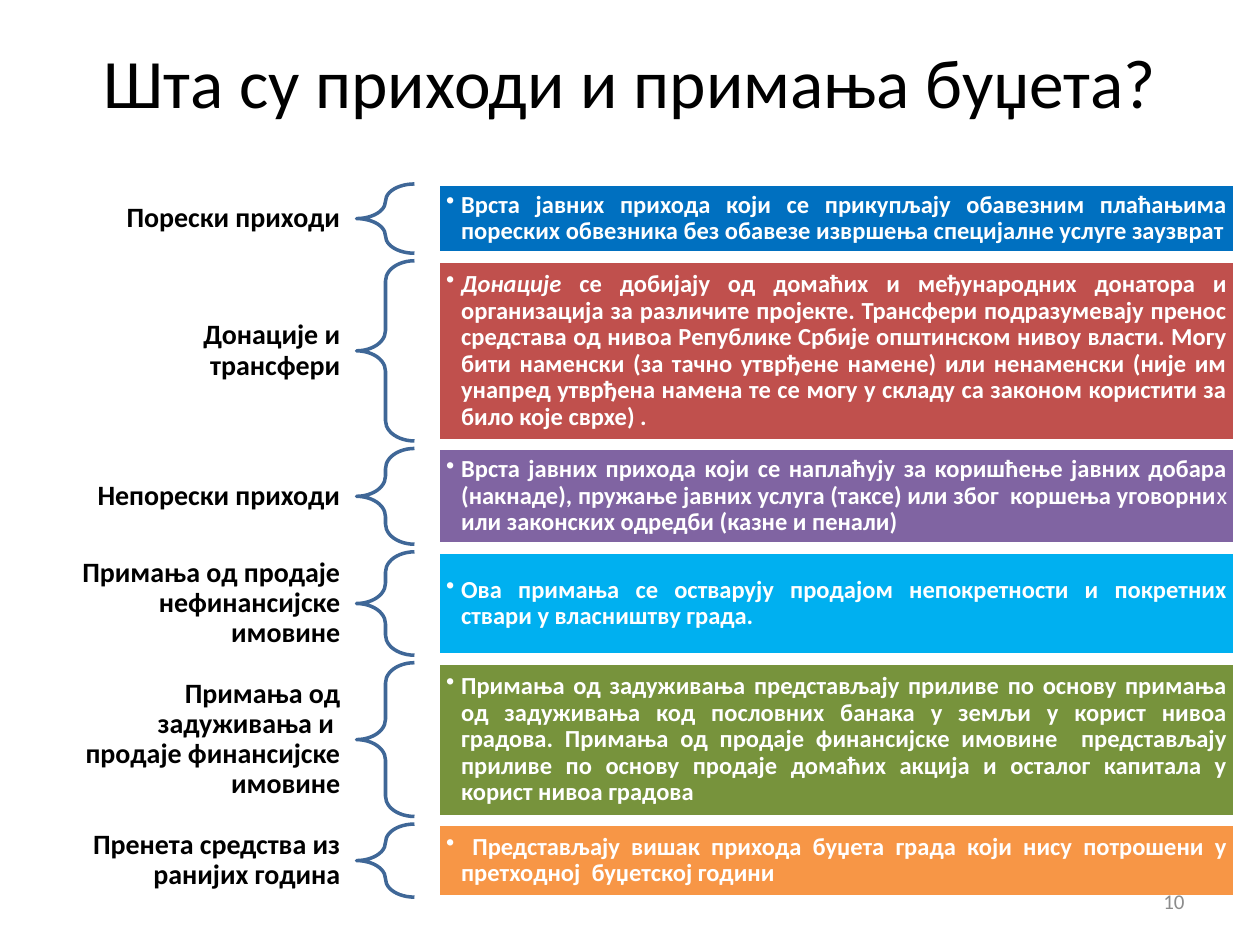
"""Build a slide that explains the kinds of budget revenue, one braced row each."""
from lxml import etree
from pptx import Presentation
from pptx.dml.color import RGBColor
from pptx.enum.shapes import MSO_SHAPE
from pptx.enum.text import MSO_ANCHOR, PP_ALIGN
from pptx.oxml.ns import qn
from pptx.util import Inches, Pt

LEFT_BRACE, RECTANGLE = MSO_SHAPE.LEFT_BRACE, MSO_SHAPE.RECTANGLE
MIDDLE = MSO_ANCHOR.MIDDLE
CENTER, RIGHT, JUSTIFY = PP_ALIGN.CENTER, PP_ALIGN.RIGHT, PP_ALIGN.JUSTIFY

BLACK = RGBColor(0x00, 0x00, 0x00)
WHITE = RGBColor(0xFF, 0xFF, 0xFF)
GRAY = RGBColor(0x8C, 0x8C, 0x8C)
BRACE_BLUE = RGBColor(0x3F, 0x67, 0x97)
BLUE = RGBColor(0x00, 0x70, 0xC0)
RED = RGBColor(0xC0, 0x50, 0x4D)
PURPLE = RGBColor(0x80, 0x64, 0xA2)
CYAN = RGBColor(0x00, 0xB0, 0xF0)
GREEN = RGBColor(0x77, 0x93, 0x3C)
ORANGE = RGBColor(0xF7, 0x96, 0x46)

ROWS_TOP, ROW_GAP = 1.46, 0.06
LABEL_LEFT, LABEL_WIDTH = 0.5, 2.32
BRACE_LEFT, BRACE_WIDTH = 2.83, 0.46
BOX_LEFT, BOX_WIDTH = 3.48, 6.32

BOLD, ITALIC, REGULAR = {"bold": True}, {"bold": True, "italic": True}, {"bold": False}

ROWS = [
    ("Порески приходи", 0.35, 0.55, BLUE, [
        ("Врста јавних прихода који се прикупљају обавезним плаћањима пореских "
         "обвезника без обавезе извршења специјалне услуге заузврат", BOLD)]),
    ("Донације и трансфери", 0.58, 1.43, RED, [
        ("Донације", ITALIC),
        (" се добијају од домаћих и међународних донатора и организација за "
         "различите пројекте. Трансфери подразумевају пренос средстава од нивоа "
         "Републике Србије општинском нивоу власти. Могу бити наменски (за тачно "
         "утврђене намене) или ненаменски (није им унапред утврђена намена те се "
         "могу у складу са законом користити за било које сврхе) .", BOLD)]),
    ("Непорески приходи", 0.35, 0.76, PURPLE, [
        ("Врста јавних прихода који се наплаћују за коришћење јавних добара "
         "(накнаде), пружање јавних услуга (таксе) или због  коршења уговорни", BOLD),
        ("х ", REGULAR),
        ("или законских одредби (казне и пенали)", BOLD)]),
    ("Примања од продаје нефинансијске имовине", 0.82, 0.82, CYAN, [
        ("Ова примања се остварују продајом непокретности и покретних ствари у "
         "власништву града.", BOLD)]),
    ("Примања од задуживања и  продаје финансијске имовине", 1.08, 1.22, GREEN, [
        ("Примања од задуживања представљају приливе по основу примања од "
         "задуживања код пословних банака у земљи у корист нивоа градова. Примања "
         "од продаје финансијске имовине  представљају приливе по основу продаје "
         "домаћих акција и осталог капитала у корист нивоа градова", BOLD)]),
    ("Пренета средства из ранијих година", 0.58, 0.58, ORANGE, [
        (" Представљају вишак прихода буџета града који нису потрошени у "
         "претходној  буџетској години", BOLD)]),
]


def write_text(shape, runs, size, color, alignment, margins=(0.1, 0.05), line_spacing=1.0):
    frame = shape.text_frame
    horizontal, vertical = map(Inches, margins)
    frame_format = {"word_wrap": True, "vertical_anchor": MIDDLE,
                    "margin_left": horizontal, "margin_right": horizontal,
                    "margin_top": vertical, "margin_bottom": vertical}
    for name, value in frame_format.items():
        setattr(frame, name, value)
    paragraph = frame.paragraphs[0]
    paragraph.alignment = alignment
    paragraph.line_spacing = line_spacing
    for text, run_format in runs:
        run = paragraph.add_run()
        run.text = text
        run.font.color.rgb = color
        for name, value in {"name": "Calibri", "size": Pt(size), **run_format}.items():
            setattr(run.font, name, value)
    return paragraph


def add_outlined_shape(kind, left, top, width, height, line_color):
    shape = slide.shapes.add_shape(kind, Inches(left), Inches(top), Inches(width), Inches(height))
    shape.shadow.inherit = False
    shape.line.color.rgb = line_color
    shape.line.width = Pt(2)
    return shape


presentation = Presentation()
presentation.slide_width, presentation.slide_height = Inches(10), Inches(7.5)
slide = presentation.slides.add_slide(presentation.slide_layouts[5])

title = slide.shapes.title
title.left, title.top, title.width, title.height = map(Inches, (0.5, 0.3, 9, 0.68))
write_text(title, [("Шта су приходи и примања буџета?", {})], 39.6, BLACK, CENTER)

top = ROWS_TOP
for label_text, label_height, height, color, runs in ROWS:
    label = slide.shapes.add_textbox(
        Inches(LABEL_LEFT), Inches(top + (height - label_height) / 2),
        Inches(LABEL_WIDTH), Inches(label_height))
    write_text(label, [(label_text, BOLD)], 16, BLACK, RIGHT, (0.12, 0.04), 0.9)

    brace = add_outlined_shape(LEFT_BRACE, BRACE_LEFT, top, BRACE_WIDTH, height, BRACE_BLUE)
    brace.fill.background()
    brace.adjustments[0] = 0.35

    box = add_outlined_shape(RECTANGLE, BOX_LEFT, top, BOX_WIDTH, height, WHITE)
    box.fill.solid()
    box.fill.fore_color.rgb = color
    paragraph = write_text(box, runs, 14, WHITE, JUSTIFY, (0.06, 0.06), 0.9)
    properties = paragraph._p.get_or_add_pPr()
    properties.set("marL", str(Inches(0.12)))
    properties.set("indent", str(Inches(-0.12)))
    etree.SubElement(properties, qn("a:buChar")).set("char", "•")

    top += height + ROW_GAP

slide_number = slide.shapes.add_textbox(Inches(7.17), Inches(6.95), Inches(2.33), Inches(0.4))
write_text(slide_number, [("10", {})], 12, GRAY, RIGHT)

presentation.save("out.pptx")
